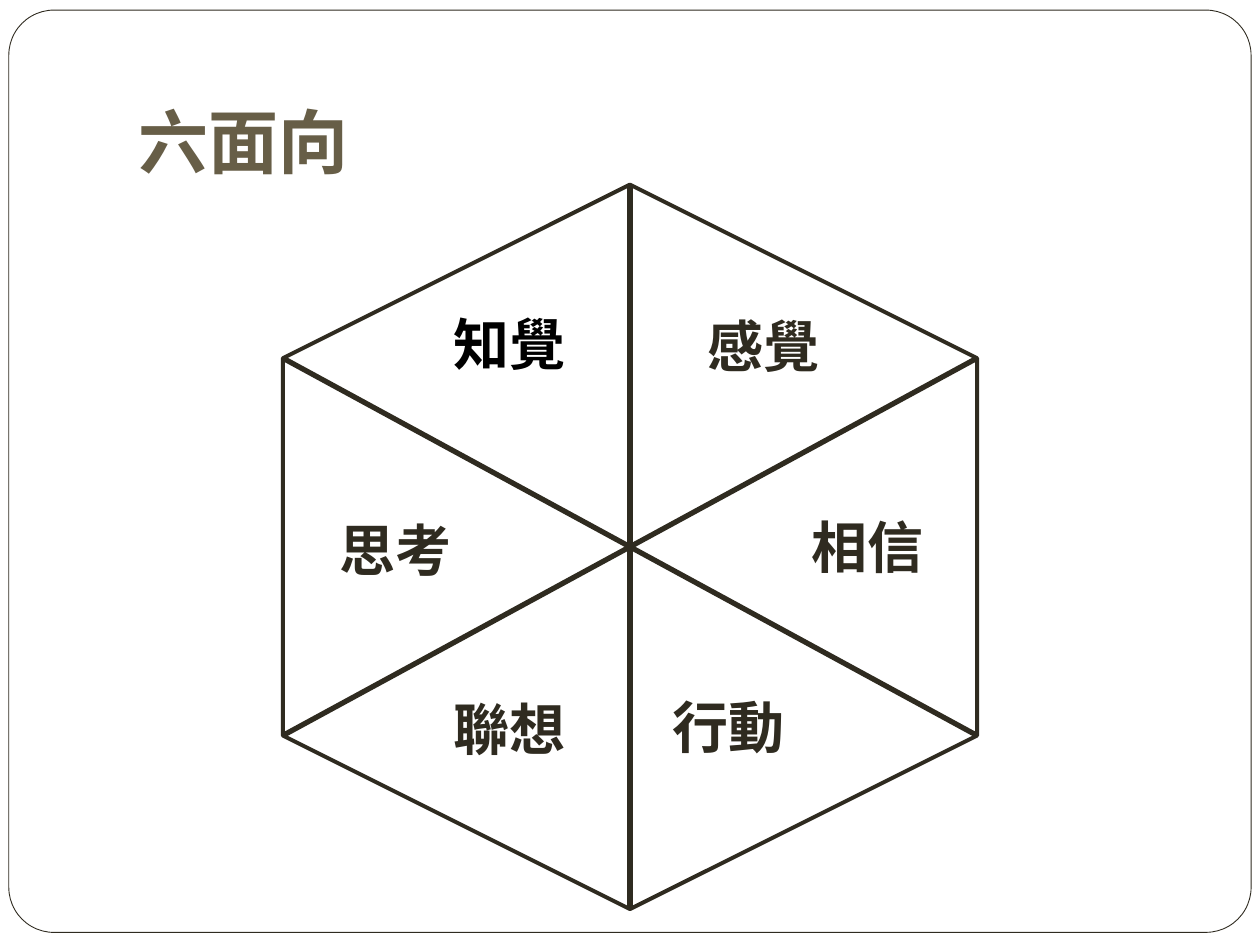
from lxml import etree
from pptx import Presentation
from pptx.dml.color import RGBColor
from pptx.enum.shapes import MSO_CONNECTOR, MSO_SHAPE
from pptx.enum.text import MSO_ANCHOR, MSO_AUTO_SIZE
from pptx.oxml.ns import qn
from pptx.util import Inches, Pt

COLORS = {"paper": "FFFFFF", "ink": "2F2B20", "title": "675E47", "black": "000000"}

# Hexagon: centre, full height (tip to tip) and full width (side to side)
CENTER_X, CENTER_Y = 5, 4.34
HEX_HEIGHT, HEX_WIDTH = 5.75, 5.51

# Facet name, left, top, colour
FACETS = [
    ("知覺", 3.5, 2.41, "black"),
    ("感覺", 5.52, 2.42, "ink"),
    ("相信", 6.34, 4.02, "ink"),
    ("行動", 5.24, 5.45, "ink"),
    ("聯想", 3.5, 5.46, "ink"),
    ("思考", 2.6, 4.04, "ink"),
]


def color(name):
    return RGBColor.from_string(COLORS[name])


def add_outline(slide, preset, left, top, width, height, line_width, fill=None):
    outline = slide.shapes.add_shape(
        preset, Inches(left), Inches(top), Inches(width), Inches(height))
    outline.shadow.inherit = False
    if fill:
        outline.fill.solid()
        outline.fill.fore_color.rgb = color(fill)
    else:
        outline.fill.background()
    outline.line.color.rgb = color("ink")
    outline.line.width = Pt(line_width)
    return outline


def add_diagonal(slide, dx, dy):
    """Draw a line through the hexagon's centre, reaching (dx, dy) each way."""
    diagonal = slide.shapes.add_connector(
        MSO_CONNECTOR.STRAIGHT,
        Inches(CENTER_X - dx), Inches(CENTER_Y - dy),
        Inches(CENTER_X + dx), Inches(CENTER_Y + dy))
    diagonal.line.color.rgb = color("ink")
    diagonal.line.width = Pt(3)
    etree.SubElement(diagonal._element.spPr, qn("a:effectLst"))


def add_text(slide, text, left, top, width, height, font, size, color_name):
    box = slide.shapes.add_textbox(
        Inches(left), Inches(top), Inches(width), Inches(height))
    frame = box.text_frame
    frame.text = text
    run_font = frame.paragraphs[0].runs[0].font
    run_font.name = font
    run_font.size = Pt(size)
    run_font.bold = True
    run_font.color.rgb = color(color_name)
    return frame


def main():
    prs = Presentation()
    prs.slide_width, prs.slide_height = Inches(10), Inches(7.5)
    slide = prs.slides.add_slide(prs.slide_layouts[6])

    # Page frame
    frame = add_outline(slide, MSO_SHAPE.ROUNDED_RECTANGLE,
                        0.07, 0.08, 9.86, 7.32, 0.5, "paper")
    frame.adjustments[0] = 0.049

    # Title
    title = add_text(slide, "六面向", 1, 0.3, 8.5, 1.25, "Lato", 40, "title")
    title.word_wrap = True
    title.vertical_anchor = MSO_ANCHOR.BOTTOM
    title.margin_bottom = Inches(0.1)

    # Hexagon standing on its tip, with its three diagonals
    hexagon = add_outline(slide, MSO_SHAPE.HEXAGON,
                          CENTER_X - HEX_HEIGHT / 2, CENTER_Y - HEX_WIDTH / 2,
                          HEX_HEIGHT, HEX_WIDTH, 2.25)
    hexagon.rotation = 270
    side_x = HEX_WIDTH / 2
    side_y = HEX_HEIGHT / 2 - HEX_WIDTH * hexagon.adjustments[0]
    for dx, dy in [(side_x, -side_y), (side_x, side_y), (0, HEX_HEIGHT / 2)]:
        add_diagonal(slide, dx, dy)

    # Facet names
    for name, left, top, color_name in FACETS:
        label = add_text(slide, name, left, top, 1.1, 0.64,
                         "Times New Roman", 32, color_name)
        label.word_wrap = False
        label.auto_size = MSO_AUTO_SIZE.SHAPE_TO_FIT_TEXT

    prs.save("out.pptx")


if __name__ == "__main__":
    main()
